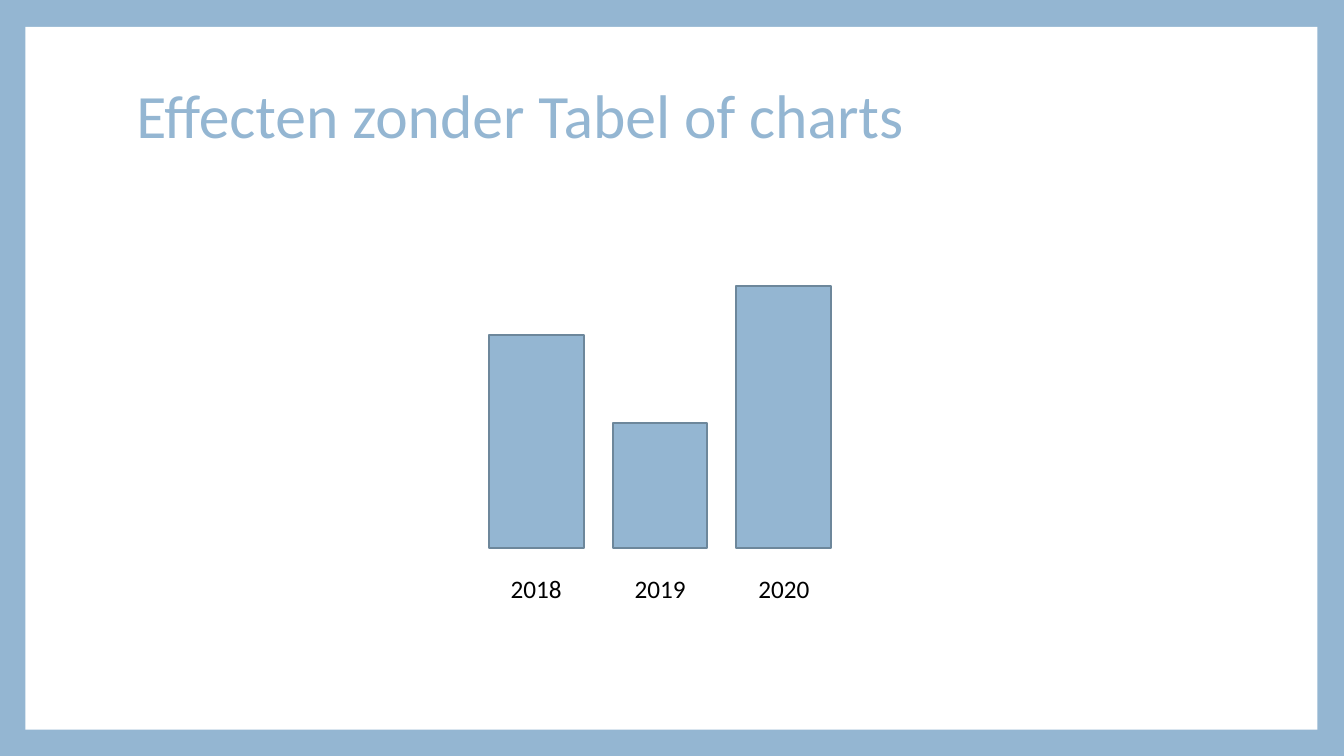
"""Build a slide with a bar diagram made of plain rectangles."""
from dataclasses import dataclass

from pptx import Presentation
from pptx import util as u
from pptx.dml.color import RGBColor
from pptx.enum import shapes, text


@dataclass(frozen=True)
class Theme:
    blue: str = "94B6D2"
    edge: str = "6D879B"
    white: str = "FFFFFF"
    black: str = "000000"
    font: str = "Calibri"
    title_size: int = 44
    label_size: int = 18


THEME = Theme()
BARS = (("2018", 5.36), ("2019", 3.15), ("2020", 6.6))
BAR_LEFT, BAR_WIDTH, BAR_STEP, BAR_BASE = 12.32, 2.39, 3.12, 13.81
LABEL_TOP, LABEL_HEIGHT = 14.33, 1.02


def write(tf, content, size, color, align=text.PP_ALIGN.LEFT,
          anchor=text.MSO_ANCHOR.TOP, spacing=1.0):
    tf.word_wrap = True
    tf.vertical_anchor = anchor
    p = tf.paragraphs[0]
    p.alignment = align
    p.line_spacing = spacing
    r = p.add_run()
    r.text = content
    r.font.name = THEME.font
    r.font.size = u.Pt(size)
    r.font.color.rgb = RGBColor.from_string(color)


def add_rect(s, left, top, width, height, fill, line=None):
    sp = s.shapes.add_shape(shapes.MSO_SHAPE.RECTANGLE, u.Cm(left), u.Cm(top),
                            u.Cm(width), u.Cm(height))
    sp.shadow.inherit = False
    sp.fill.solid()
    sp.fill.fore_color.rgb = RGBColor.from_string(fill)
    if line:
        sp.line.color.rgb = RGBColor.from_string(line)
        sp.line.width = u.Pt(1.5)
    else:
        sp.line.fill.background()
    return sp


def add_frame(s):
    s.background.fill.solid()
    s.background.fill.fore_color.rgb = RGBColor.from_string(THEME.blue)
    panel = add_rect(s, 0.64, 0.68, 32.56, 17.71, THEME.white)
    s.shapes._spTree.insert(2, panel._element)


def add_title(s, content):
    sp = s.shapes.title
    sp.left, sp.top = u.Cm(3.18), u.Cm(1.7)
    sp.width, sp.height = u.Cm(27.43), u.Cm(2.57)
    write(sp.text_frame, content, THEME.title_size, THEME.blue,
          anchor=text.MSO_ANCHOR.MIDDLE, spacing=0.9)


def add_label(s, left, content):
    sp = s.shapes.add_textbox(u.Cm(left), u.Cm(LABEL_TOP),
                              u.Cm(BAR_WIDTH), u.Cm(LABEL_HEIGHT))
    write(sp.text_frame, content, THEME.label_size, THEME.black,
          align=text.PP_ALIGN.CENTER)
    sp.text_frame.auto_size = text.MSO_AUTO_SIZE.SHAPE_TO_FIT_TEXT


def add_bars(s):
    for i, (year, height) in enumerate(BARS):
        left = BAR_LEFT + i * BAR_STEP
        sp = add_rect(s, left, BAR_BASE - height, BAR_WIDTH, height,
                      THEME.blue, THEME.edge)
        sp.name = f"Bar {year}"
        add_label(s, left, year)


def main():
    prs = Presentation()
    prs.slide_width, prs.slide_height = u.Cm(33.87), u.Cm(19.05)
    s = prs.slides.add_slide(prs.slide_layouts.get_by_name("Title Only"))
    add_frame(s)
    add_title(s, "Effecten zonder Tabel of charts")
    add_bars(s)
    prs.save("out.pptx")


if __name__ == "__main__":
    main()
